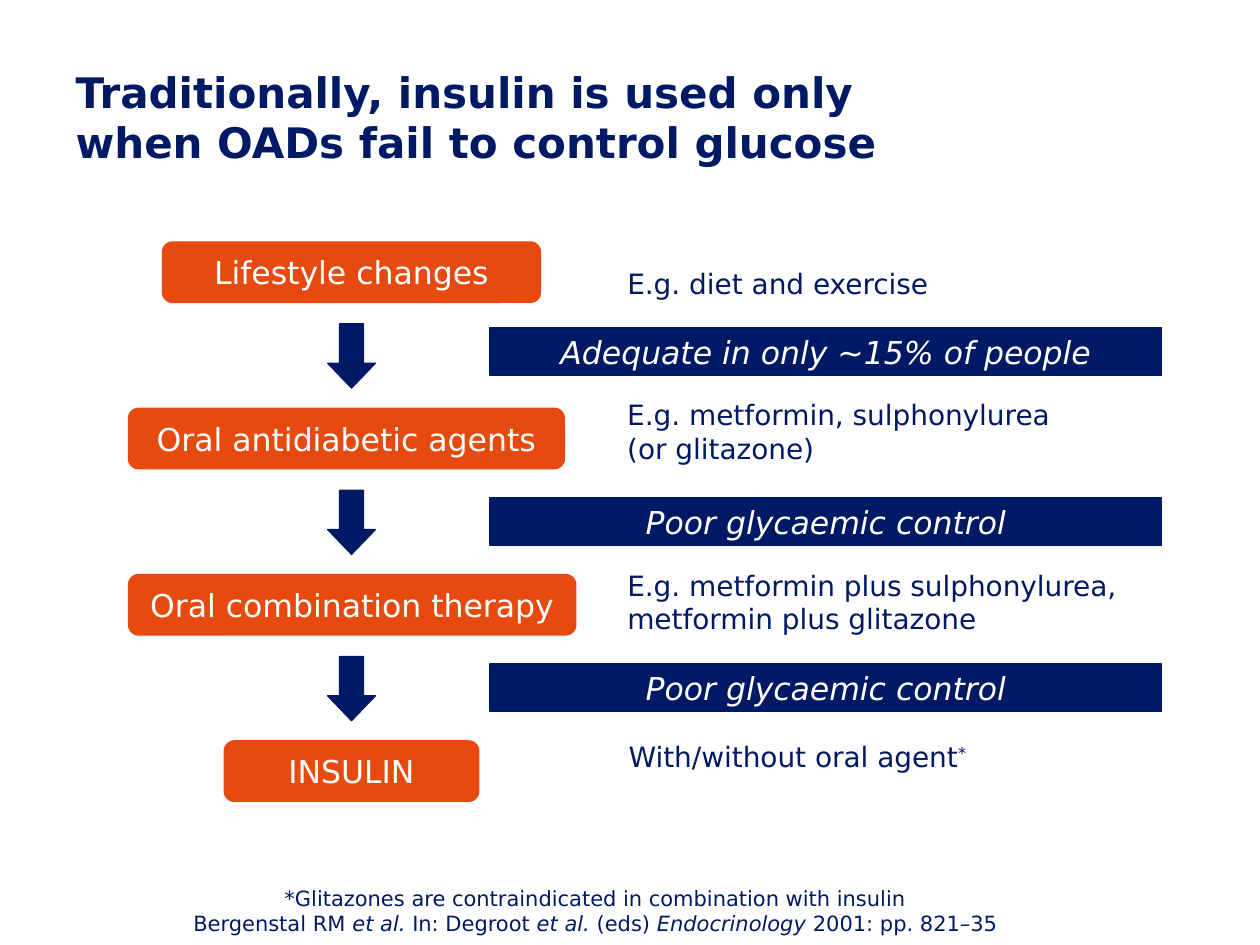
"""Build a slide showing the traditional treatment steps that lead to insulin."""
from pptx import Presentation
from pptx import util as u
from pptx.dml.color import RGBColor
from pptx.enum import shapes, text

COLORS = {"navy": "001965", "orange": "E64A0E", "white": "FFFFFF"}
FONT = "DejaVu Sans"
STEP_GAP = 1.32
ITALIC = {"italic": True}

STEPS = [
    ("Lifestyle changes", 1.29, 3.0),
    ("Oral antidiabetic agents", 1.02, 3.46),
    ("Oral combination therapy", 1.02, 3.55),
    ("INSULIN", 1.78, 2.02),
]
OUTCOMES = [
    ("Adequate in only ~15% of people", 2.6),
    ("Poor glycaemic control", 3.95),
    ("Poor glycaemic control", 5.27),
]
EXAMPLES = [
    (["E.g. diet and exercise"], (4.88, 2.07, 4.35, 0.37)),
    (["E.g. metformin, sulphonylurea", "\n", "(or glitazone)"], (4.88, 3.11, 4.7, 0.64)),
    (["E.g. metformin plus sulphonylurea, metformin plus glitazone"], (4.88, 4.46, 4.85, 0.64)),
    (["With/without oral agent", ("*", {"baseline": 30000})], (4.89, 5.82, 3.55, 0.37)),
]
FOOTNOTE = [
    ["*Glitazones are contraindicated in combination with insulin"],
    ["Bergenstal RM ", ("et al.", ITALIC), " In: Degroot ", ("et al.", ITALIC),
     " (eds) ", ("Endocrinology", ITALIC), " 2001: pp. 821–35"],
]


def rgb(name):
    """Return the named palette colour."""
    return RGBColor.from_string(COLORS[name])


def inches(box):
    """Convert a left, top, width, height box to lengths."""
    return [u.Inches(v) for v in box]


def add_run(p, content, size, color, bold=False, italic=False, baseline=0):
    """Add one formatted run to a paragraph."""
    r = p.add_run()
    r.text = content
    f = r.font
    f.name, f.size, f.bold, f.italic = FONT, u.Pt(size), bold, italic
    f.color.rgb = rgb(color)
    if baseline:
        r._r.get_or_add_rPr().set("baseline", str(baseline))


def write(tf, paragraphs, align=text.PP_ALIGN.LEFT, anchor=text.MSO_ANCHOR.TOP,
          fit=text.MSO_AUTO_SIZE.NONE, wrap=True, **font):
    """Fill a text frame with paragraphs made of plain or specially formatted runs."""
    tf.word_wrap, tf.auto_size, tf.vertical_anchor = wrap, fit, anchor
    for i, runs in enumerate(paragraphs):
        p = tf.add_paragraph() if i else tf.paragraphs[0]
        p.alignment = align
        for item in runs:
            content, extra = item if isinstance(item, tuple) else (item, {})
            if content == "\n":
                p.add_line_break()
            else:
                add_run(p, content, **{**font, **extra})


def add_block(s, kind, box, color, label=None, **font):
    """Add a filled shape, with a centred white label if one is given."""
    sp = s.shapes.add_shape(kind, *inches(box))
    sp.shadow.inherit = False
    sp.fill.solid()
    sp.fill.fore_color.rgb = sp.line.color.rgb = rgb(color)
    sp.line.width = u.Pt(0.75)
    if label:
        write(sp.text_frame, [[label]], align=text.PP_ALIGN.CENTER,
              anchor=text.MSO_ANCHOR.MIDDLE, size=18, color="white", **font)
    return sp


def add_note(s, paragraphs, box, **fmt):
    """Add a navy text box that grows with its text."""
    tf = s.shapes.add_textbox(*inches(box)).text_frame
    write(tf, paragraphs, fit=text.MSO_AUTO_SIZE.SHAPE_TO_FIT_TEXT, color="navy", **fmt)


def add_title(s, box):
    """Place and fill the title placeholder."""
    sp = s.shapes.title
    sp.left, sp.top, sp.width, sp.height = inches(box)
    write(sp.text_frame,
          [["Traditionally, insulin is used only when OADs fail to control glucose"]],
          anchor=text.MSO_ANCHOR.MIDDLE, size=24, color="navy", bold=True)


def add_steps(s, top, height):
    """Add the column of treatment steps with arrows between them."""
    for i, (label, left, width) in enumerate(STEPS):
        y = top + i * STEP_GAP
        add_block(s, shapes.MSO_SHAPE.ROUNDED_RECTANGLE, (left, y, width, height),
                  "orange", label, wrap=False)
        if i < len(STEPS) - 1:
            arrow = add_block(s, shapes.MSO_SHAPE.DOWN_ARROW, (2.6, y + 0.65, 0.38, 0.51), "navy")
            arrow.adjustments[1] = 0.52


def add_outcomes(s, left, width, height):
    """Add the bars that tell why each step falls short."""
    for label, top in OUTCOMES:
        add_block(s, shapes.MSO_SHAPE.RECTANGLE, (left, top, width, height),
                  "navy", label, italic=True)


def main():
    """Build and save the slide."""
    prs = Presentation()
    prs.slide_width, prs.slide_height = u.Inches(10), u.Inches(7.5)
    s = prs.slides.add_slide(prs.slide_layouts[5])
    add_title(s, (0.5, 0.3, 7.16, 1.25))
    add_outcomes(s, 3.89, 5.33, 0.38)
    add_steps(s, 1.92, 0.48)
    for runs, box in EXAMPLES:
        add_note(s, [runs], box, size=16)
    add_note(s, FOOTNOTE, (1.3, 6.98, 6.85, 0.5), size=12, align=text.PP_ALIGN.CENTER)
    prs.save("out.pptx")


if __name__ == "__main__":
    main()
